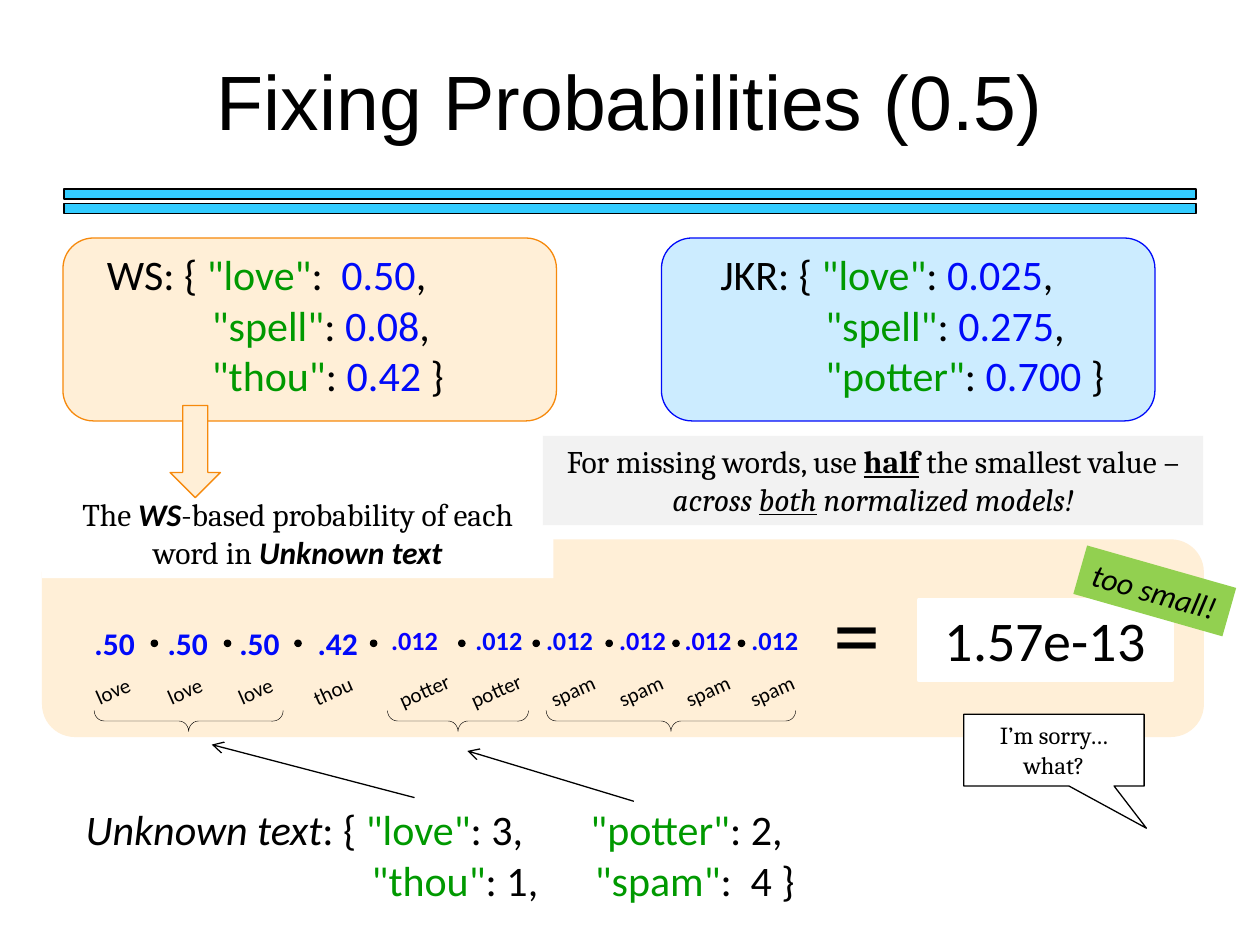
from dataclasses import dataclass
from typing import Optional

from lxml.etree import SubElement
from pptx import Presentation
from pptx.dml.color import RGBColor
from pptx.enum.shapes import MSO_CONNECTOR, MSO_SHAPE
from pptx.enum.text import MSO_ANCHOR, PP_ALIGN
from pptx.oxml.ns import qn
from pptx.util import Pt

COLORS = {
    "black": "000000", "white": "FFFFFF", "cyan": "33CCFF", "sky": "CCECFF",
    "cream": "FFEFD7", "orange": "F6890C", "blue": "000AF9", "indigo": "0900FF",
    "green": "009900", "gray": "F2F2F2", "lime": "92D050",
}


@dataclass
class Span:
    text: str
    color: Optional[str] = None
    bold: Optional[bool] = None
    italic: Optional[bool] = None
    underline: Optional[bool] = None
    font: Optional[str] = None


@dataclass
class Line:
    spans: list[Span]
    stops: tuple[float, ...] = ()


@dataclass
class Style:
    size: float
    font: str = "Calibri"
    color: str = "black"
    bold: Optional[bool] = None
    italic: Optional[bool] = None
    align: PP_ALIGN = PP_ALIGN.CENTER
    anchor: MSO_ANCHOR = MSO_ANCHOR.TOP
    wrap: bool = True


@dataclass
class Frame:
    left: float
    top: float
    width: float
    height: float
    rotation: float = 0

    def lengths(self) -> tuple:
        return Pt(self.left), Pt(self.top), Pt(self.width), Pt(self.height)


@dataclass
class Factor:
    value: str
    value_center: float
    word: str
    word_center: float
    dot_center: Optional[float] = None
    size: float = 18
    color: str = "blue"


def rgb(name: str) -> RGBColor:
    return RGBColor.from_string(COLORS[name])


def write(box, lines: list[Line], style: Style) -> None:
    frame = box.text_frame
    frame.word_wrap = style.wrap
    frame.vertical_anchor = style.anchor
    for number, line in enumerate(lines):
        para = frame.add_paragraph() if number else frame.paragraphs[0]
        para.alignment = style.align
        if line.stops:
            tabs = SubElement(para._p.get_or_add_pPr(), qn("a:tabLst"))
            for stop in line.stops:
                SubElement(tabs, qn("a:tab"), pos=str(int(Pt(stop))), algn="l")
        font = para.font
        font.size, font.name = Pt(style.size), style.font
        font.bold, font.italic = style.bold, style.italic
        font.color.rgb = rgb(style.color)
        for span in line.spans:
            run = para.add_run()
            run.text = span.text
            run.font.bold, run.font.italic = span.bold, span.italic
            run.font.underline, run.font.name = span.underline, span.font
            # A run of its own colour must override the colour of a shape's text
            run.font.color.rgb = rgb(span.color or style.color)


def add_text(page, frame: Frame, lines: list[Line], style: Style) -> None:
    box = page.shapes.add_textbox(*frame.lengths())
    box.rotation = frame.rotation
    write(box, lines, style)


def add_figure(page, kind: MSO_SHAPE, frame: Frame, fill: Optional[str] = None,
               outline: Optional[str] = None, weight: float = 0.75):
    figure = page.shapes.add_shape(kind, *frame.lengths())
    figure.rotation = frame.rotation
    figure.shadow.inherit = False
    if fill:
        figure.fill.solid()
        figure.fill.fore_color.rgb = rgb(fill)
    else:
        figure.fill.background()
    if outline:
        figure.line.color.rgb = rgb(outline)
        figure.line.width = Pt(weight)
    else:
        figure.line.fill.background()
    return figure


def add_arrow(page, start: tuple[float, float], end: tuple[float, float]) -> None:
    points = [Pt(value) for value in (*start, *end)]
    arrow = page.shapes.add_connector(MSO_CONNECTOR.STRAIGHT, *points)
    arrow.line.color.rgb = rgb("black")
    arrow.line.width = Pt(0.75)
    SubElement(arrow.line._get_or_add_ln(), qn("a:tailEnd"), type="arrow")
    SubElement(arrow._element.spPr, qn("a:effectLst"))


def add_model(page, left: float, text_left: float, fill: str, outline: str,
              name: str, entries: list[tuple[str, str]], stops: tuple[float, ...]) -> None:
    """Draw a rounded card that lists a model's word probabilities."""
    add_figure(page, MSO_SHAPE.ROUNDED_RECTANGLE, Frame(left, 136, 282, 104.5), fill, outline)
    lines = []
    for number, (word, value) in enumerate(entries):
        first, last = number == 0, number == len(entries) - 1
        lead = f"{name}: {{ " if first else "\t"
        gap = ":\t" if first and stops else ": "
        spans = [Span(lead), Span(f'"{word}"', "green"), Span(gap),
                 Span(value, "blue"), Span(" }" if last else ",")]
        lines.append(Line(spans, stops if first else (60,)))
    add_text(page, Frame(text_left, 138.6, 264, 94), lines, Style(24, align=PP_ALIGN.LEFT))


def add_factor(page, factor: Factor) -> None:
    add_text(page, Frame(factor.value_center - 24, 353.2, 48, factor.size * 1.6),
             [Line([Span(factor.value)])],
             Style(factor.size, color=factor.color, bold=True, wrap=False))
    add_text(page, Frame(factor.word_center - 30, 383.75, 60, 21.6, 336.1),
             [Line([Span(factor.word)])], Style(12, wrap=False))
    if factor.dot_center:
        add_figure(page, MSO_SHAPE.OVAL, Frame(factor.dot_center - 1.8, 365.8, 3.6, 3.6),
                   "black", "black")


def main() -> None:
    deck = Presentation()
    deck.slide_width, deck.slide_height = Pt(720), Pt(540)
    page = deck.slides.add_slide(deck.slide_layouts[6])

    for top in (108, 116.2):
        add_figure(page, MSO_SHAPE.RECTANGLE, Frame(36.5, top, 647, 5.8), "cyan", "black")
    add_text(page, Frame(54, 12, 612, 90), [Line([Span("Fixing Probabilities (0.5)")])],
             Style(44, "Arial", anchor=MSO_ANCHOR.MIDDLE))

    add_model(page, 378, 404.5, "sky", "blue", "JKR",
              [("love", "0.025"), ("spell", "0.275"), ("potter", "0.700")], ())
    add_model(page, 36, 54, "cream", "orange", "WS",
              [("love", "0.50"), ("spell", "0.08"), ("thou", "0.42")], (134,))

    add_figure(page, MSO_SHAPE.ROUNDED_RECTANGLE, Frame(24, 308.2, 664, 113), "cream")
    factors = [
        Factor(".50", 65.5, "love", 64.4, 88.2),
        Factor(".50", 107.3, "love", 105.5, 130),
        Factor(".50", 148.3, "love", 145.8, 170.3),
        Factor(".42", 193, "thou", 190.1, 213.5),
        Factor(".012", 236.9, "potter", 242.3, 263.9, 15, "indigo"),
        Factor(".012", 285.1, "potter", 283.3, 306.4, 15),
        Factor(".012", 325.4, "spam", 327.2, 348.1, 15),
        Factor(".012", 367.2, "spam", 366.1, 386.3, 15, "indigo"),
        Factor(".012", 404.6, "spam", 404.3, 423.7, 15, "indigo"),
        Factor(".012", 442.8, "spam", 441, size=15),
    ]
    for factor in factors:
        add_factor(page, factor)
    for center, span_width in ((107.8, 108), (261.7, 80.6), (383.4, 142.6)):
        brace = add_figure(page, MSO_SHAPE.RIGHT_BRACE,
                           Frame(center - 6, 412 - span_width / 2, 12, span_width, 90),
                           outline="black", weight=0.25)
        brace.adjustments[0] = 0.475

    add_text(page, Frame(468.7, 324.7, 41.8, 72.7), [Line([Span("=")])], Style(54))
    result = add_figure(page, MSO_SHAPE.RECTANGLE, Frame(525, 342.7, 144.7, 46), "white", "white", 2.25)
    write(result, [Line([Span("1.57e-13")])], Style(32))

    caption = add_figure(page, MSO_SHAPE.RECTANGLE, Frame(24, 279.4, 292.3, 51), "white")
    write(caption, [Line([
        Span("The "), Span("WS", bold=True, italic=True, font="Calibri"),
        Span("-based probability of each word in "),
        Span("Unknown text", bold=True, italic=True, font="Calibri")])], Style(18, "Cambria"))
    add_figure(page, MSO_SHAPE.DOWN_ARROW, Frame(97.2, 231.8, 28.8, 52.6), "cream", "orange")

    add_text(page, Frame(41.8, 455.8, 444, 65.5), [
        Line([Span("Unknown text", italic=True), Span(": { "), Span('"love"', "green"),
              Span(": 3,\t"), Span('"potter"', "green"), Span(": 2,")], (288.5,)),
        Line([Span('\t"thou"', "green"), Span(": 1,\t"), Span('"spam"', "green"),
              Span(":\t4 }")], (163.5, 291, 380)),
    ], Style(24, align=PP_ALIGN.LEFT))
    add_arrow(page, (236.9, 455.8), (121, 425.5))
    add_arrow(page, (362.2, 457.9), (267.1, 429.1))

    rule = add_figure(page, MSO_SHAPE.RECTANGLE, Frame(310.3, 249.1, 377.3, 51), "gray")
    write(rule, [Line([
        Span("For missing words, use "), Span("half", bold=True, underline=True),
        Span(" the smallest value – "), Span("across ", italic=True),
        Span("both", italic=True, underline=True),
        Span(" normalized models!", italic=True)])], Style(18, "Cambria"))

    callout = add_figure(page, MSO_SHAPE.RECTANGULAR_CALLOUT, Frame(550.8, 408.2, 103, 41), "white", "black")
    callout.adjustments[0], callout.adjustments[1] = 0.513, 1.089
    write(callout, [Line([Span("I’m sorry…what?")])], Style(14, "Cambria"))

    label = add_figure(page, MSO_SHAPE.RECTANGLE, Frame(615.6, 323.3, 88.6, 28.8, 15.9), "lime")
    write(label, [Line([Span("too small!")])], Style(18, italic=True, wrap=False))

    deck.save("out.pptx")


if __name__ == "__main__":
    main()
